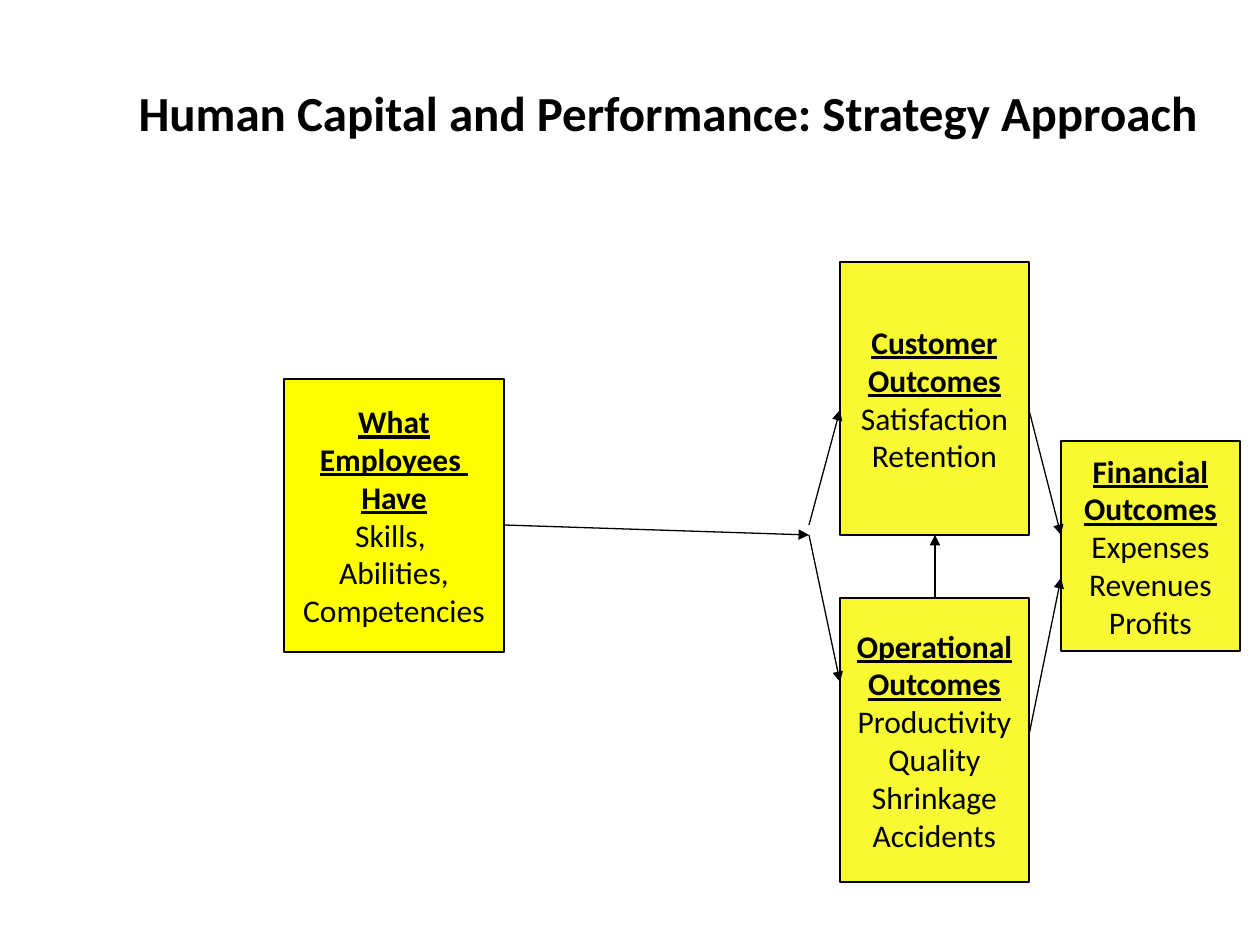
from lxml import etree
from pptx import Presentation
from pptx.dml.color import RGBColor
from pptx.enum.shapes import MSO_CONNECTOR, MSO_SHAPE
from pptx.enum.text import MSO_ANCHOR, MSO_AUTO_SIZE, PP_ALIGN
from pptx.oxml.ns import qn
from pptx.util import Emu, Pt

RECT, STRAIGHT = MSO_SHAPE.RECTANGLE, MSO_CONNECTOR.STRAIGHT
TOP, MIDDLE = MSO_ANCHOR.TOP, MSO_ANCHOR.MIDDLE
LEFT, CENTER = PP_ALIGN.LEFT, PP_ALIGN.CENTER
NO_FIT = MSO_AUTO_SIZE.NONE

FONT = "Calibri"
COLORS = {"ink": "000000", "people": "FFFF00", "outcome": "F9F933"}

TITLE = "Human Capital and Performance: Strategy Approach"
TITLE_BOX = (126, 76, 1102, 72)

# fill, (left, top, width, height), heading lines, item lines
BOXES = [
    ("people", (284, 379, 220, 273), ["What", "Employees ", "Have"],
     ["Skills, ", "Abilities,", "Competencies"]),
    ("outcome", (840, 262, 189, 273), ["Customer", "Outcomes"],
     ["Satisfaction", "Retention"]),
    ("outcome", (840, 598, 189, 284), ["Operational", "Outcomes"],
     ["Productivity", "Quality", "Shrinkage", "Accidents"]),
    ("outcome", (1061, 441, 179, 210), ["Financial", "Outcomes"],
     ["Expenses", "Revenues", "Profits"]),
]

# start x, start y, end x, end y
ARROWS = [
    (504, 525, 809, 535),
    (809, 525, 840, 410),
    (809, 535, 840, 682),
    (935, 598, 935, 535),
    (1029, 410, 1061, 535),
    (1029, 735, 1061, 578),
]


def px(n):
    return Emu(round(n * 914400 / 126))


def rgb(name):
    return RGBColor.from_string(COLORS[name])


def style(p, size, align, bold, underline=False):
    p.alignment = align
    for r in p.runs:
        r.font.name = FONT
        r.font.size = Pt(size)
        r.font.bold = bold
        r.font.underline = underline
        r.font.color.rgb = rgb("ink")


def set_line(sp):
    sp.line.color.rgb = rgb("ink")
    sp.line.width = Pt(0.75)


def add_title(slide):
    sp = slide.shapes.title
    sp.left, sp.top, sp.width, sp.height = map(px, TITLE_BOX)
    tf = sp.text_frame
    tf.text = TITLE
    tf.word_wrap = True
    tf.auto_size = NO_FIT
    tf.vertical_anchor = TOP
    style(tf.paragraphs[0], 28, LEFT, True)


def add_box(slide, fill, box, heading, items):
    sp = slide.shapes.add_shape(RECT, *map(px, box))
    sp.shadow.inherit = False
    sp.fill.solid()
    sp.fill.fore_color.rgb = rgb(fill)
    set_line(sp)
    tf = sp.text_frame
    tf.text = "\n".join(heading + items)
    tf.word_wrap = False
    tf.vertical_anchor = MIDDLE
    for i, p in enumerate(tf.paragraphs):
        is_heading = i < len(heading)
        style(p, 18, CENTER, is_heading, is_heading)


def add_arrow(slide, ends):
    line = slide.shapes.add_connector(STRAIGHT, *map(px, ends))
    set_line(line)
    etree.SubElement(line.line._get_or_add_ln(), qn("a:tailEnd"), type="triangle")
    etree.SubElement(line._element.spPr, qn("a:effectLst"))


def main():
    prs = Presentation()
    prs.slide_width, prs.slide_height = px(1260), px(945)
    slide = prs.slides.add_slide(prs.slide_layouts[5])
    add_title(slide)
    for box in BOXES:
        add_box(slide, *box)
    for ends in ARROWS:
        add_arrow(slide, ends)
    prs.save("out.pptx")


if __name__ == "__main__":
    main()
